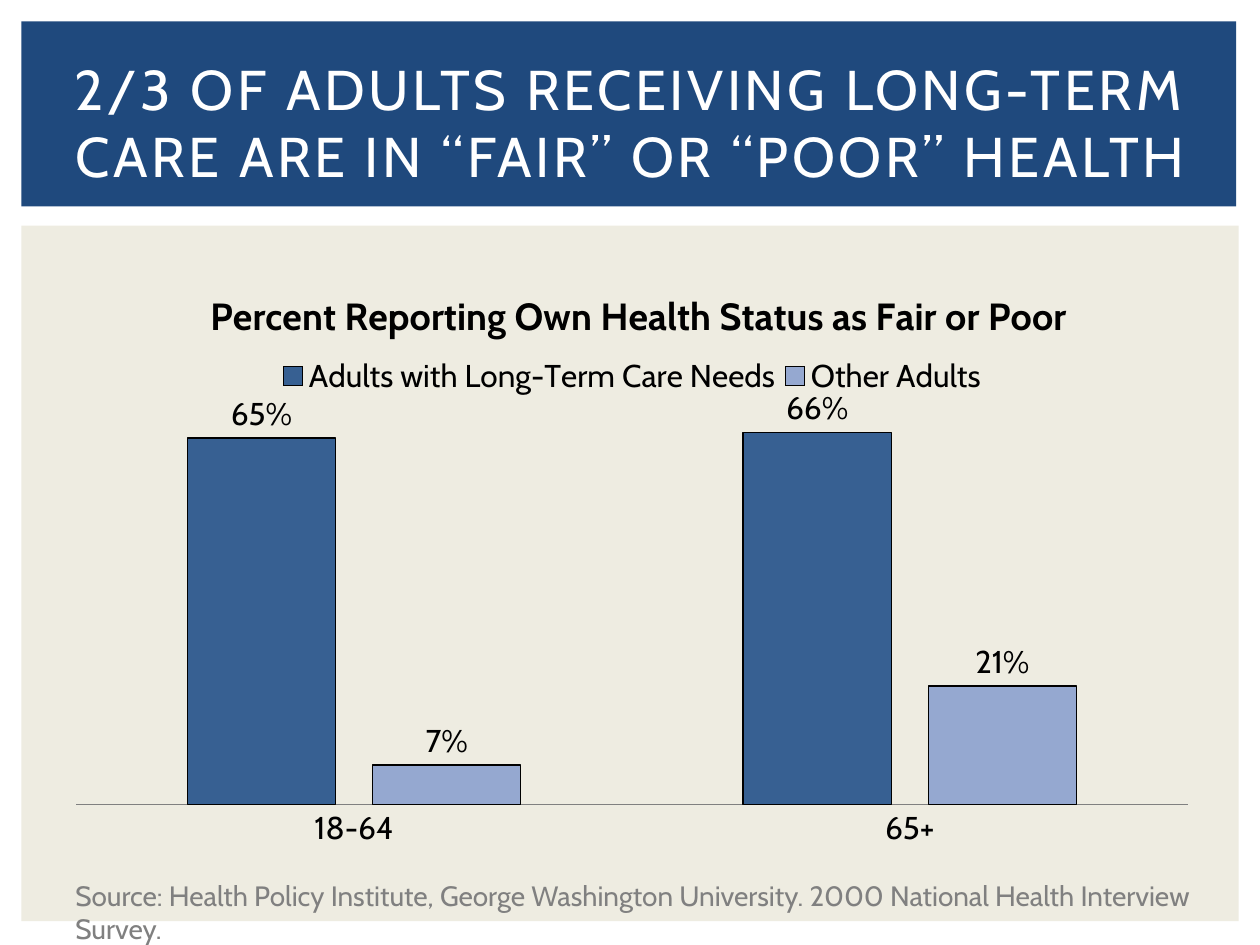
from dataclasses import dataclass

import pptx
import pptx.chart.data
import pptx.dml.color
import pptx.enum.chart
import pptx.enum.shapes
import pptx.enum.text
import pptx.oxml
import pptx.oxml.ns
import pptx.util
from pptx.util import Cm


@dataclass(frozen=True)
class Theme:
    font: str = "Cabin"
    band: str = "1F497D"
    panel: str = "EEECE1"
    care_needs: str = "376092"
    other_adults: str = "95A8D0"
    ink: str = "000000"
    white: str = "FFFFFF"
    grey: str = "808080"
    headline_size: float = 32
    chart_title_size: float = 21.6
    chart_size: float = 18
    source_size: float = 16


@dataclass(frozen=True)
class Box:
    left: float
    top: float
    width: float
    height: float

    def inner(self, left, top, width, height):
        return Box(self.left + left, self.top + top, width, height)

    def lengths(self):
        return Cm(self.left), Cm(self.top), Cm(self.width), Cm(self.height)


THEME = Theme()


def rgb(value):
    return pptx.dml.color.RGBColor.from_string(value)


def style_font(font, size, color, bold=False):
    font.name = THEME.font
    font.size = pptx.util.Pt(size)
    font.bold = bold
    font.color.rgb = rgb(color)


def write_text(frame, text, *, size, color, bold=False, align=None, spacing=None):
    paragraph = frame.paragraphs[0]
    paragraph.alignment = align
    run = paragraph.add_run()
    run.text = text
    style_font(run.font, size, color, bold)
    if spacing:
        run.font._element.set("spc", str(spacing * 100))


def add_background(slide, box, color):
    background = slide.shapes.add_shape(
        pptx.enum.shapes.MSO_SHAPE.RECTANGLE, *box.lengths()
    )
    background.shadow.inherit = False
    background.fill.solid()
    background.fill.fore_color.rgb = rgb(color)
    background.line.fill.background()
    return background


def add_headline(slide, box, text):
    band = add_background(slide, box, THEME.band)
    headline = slide.shapes.title
    headline.element.addprevious(band.element)
    place = box.inner(0.64, 0.56, 23.29, 2.92)
    headline.left, headline.top, headline.width, headline.height = place.lengths()
    frame = headline.text_frame
    frame.word_wrap = True
    frame.auto_size = pptx.enum.text.MSO_AUTO_SIZE.NONE
    frame.vertical_anchor = pptx.enum.text.MSO_ANCHOR.MIDDLE
    write_text(
        frame, text, size=THEME.headline_size, color=THEME.white,
        align=pptx.enum.text.PP_ALIGN.CENTER, spacing=2,
    )


def set_layout(part, index, x, y, width=None, height=None, inner=False):
    for old in part.findall(pptx.oxml.ns.qn("c:layout")):
        part.remove(old)
    values = {"xMode": "edge", "yMode": "edge", "x": x, "y": y, "w": width, "h": height}
    if inner:
        values = {"layoutTarget": "inner", **values}
    tags = "".join(
        f'<c:{tag} val="{value}"/>' for tag, value in values.items() if value is not None
    )
    part.insert(index, pptx.oxml.parse_xml(
        f'<c:layout {pptx.oxml.ns.nsdecls("c")}>'
        f"<c:manualLayout>{tags}</c:manualLayout></c:layout>"
    ))


def style_series(series, color):
    series.format.fill.solid()
    series.format.fill.fore_color.rgb = rgb(color)
    series.format.line.color.rgb = rgb(THEME.ink)
    series.format.line.width = pptx.util.Pt(0.75)
    labels = series.data_labels
    labels.show_value = True
    labels.number_format = "0%"
    labels.number_format_is_linked = False
    labels.position = pptx.enum.chart.XL_LABEL_POSITION.OUTSIDE_END
    style_font(labels.font, THEME.chart_size, THEME.ink)


def add_health_chart(slide, box):
    health = pptx.chart.data.CategoryChartData(number_format="0%")
    health.categories = ["18-64", "65+"]
    health.add_series("Adults with Long-Term Care Needs", (0.65, 0.66))
    health.add_series("Other Adults", (0.07, 0.21))
    chart = slide.shapes.add_chart(
        pptx.enum.chart.XL_CHART_TYPE.COLUMN_CLUSTERED, *box.lengths(), health
    ).chart
    style_font(chart.font, THEME.chart_size, THEME.ink)

    chart.has_title = True
    write_text(
        chart.chart_title.text_frame, "Percent Reporting Own Health Status as Fair or Poor",
        size=THEME.chart_title_size, color=THEME.ink, bold=True,
    )
    set_layout(chart.chart_title._element, 1, 0.13, 0.05)

    chart.has_legend = True
    chart.legend.position = pptx.enum.chart.XL_LEGEND_POSITION.TOP
    chart.legend.include_in_layout = False
    style_font(chart.legend.font, THEME.chart_size, THEME.ink)
    set_layout(chart.legend._element, 1, 0.19, 0.17, 0.62, 0.07)

    ages = chart.category_axis
    ages.major_tick_mark = pptx.enum.chart.XL_TICK_MARK.NONE
    ages.format.line.color.rgb = rgb(THEME.grey)
    shares = chart.value_axis
    shares.minimum_scale, shares.maximum_scale = 0, 0.7
    shares.has_major_gridlines = False
    shares.visible = False

    columns = chart.plots[0]
    columns.vary_by_categories = False
    columns.gap_width, columns.overlap = 150, -25
    for series, color in zip(columns.series, (THEME.care_needs, THEME.other_adults)):
        style_series(series, color)
    plot_area = chart._chartSpace.chart.plotArea
    set_layout(plot_area, 0, 0.02, 0.26, 0.96, 0.65, inner=True)


def add_source(slide, box, text):
    frame = slide.shapes.add_textbox(*box.lengths()).text_frame
    frame.word_wrap = True
    frame.auto_size = pptx.enum.text.MSO_AUTO_SIZE.SHAPE_TO_FIT_TEXT
    write_text(frame, text, size=THEME.source_size, color=THEME.grey)


def add_findings(slide, box):
    panel = add_background(slide, box, THEME.panel)
    slide.shapes.title.element.addprevious(panel.element)
    add_health_chart(slide, box.inner(0.64, 0.53, 23.34, 12.24))
    add_source(
        slide, box.inner(0.84, 13.03, 23.29, 1.63),
        "Source: Health Policy Institute, George Washington University. "
        "2000 National Health Interview Survey.",
    )


def main():
    deck = pptx.Presentation()
    deck.slide_width, deck.slide_height = Cm(25.4), Cm(19.05)
    slide = deck.slides.add_slide(deck.slide_layouts[5])
    add_findings(slide, Box(0.43, 4.55, 24.54, 14.02))
    add_headline(
        slide, Box(0.43, 0.43, 24.49, 3.73),
        "2/3 OF ADULTS RECEIVING LONG-TERM CARE ARE IN “FAIR” OR “POOR” HEALTH",
    )
    deck.save("out.pptx")


if __name__ == "__main__":
    main()
